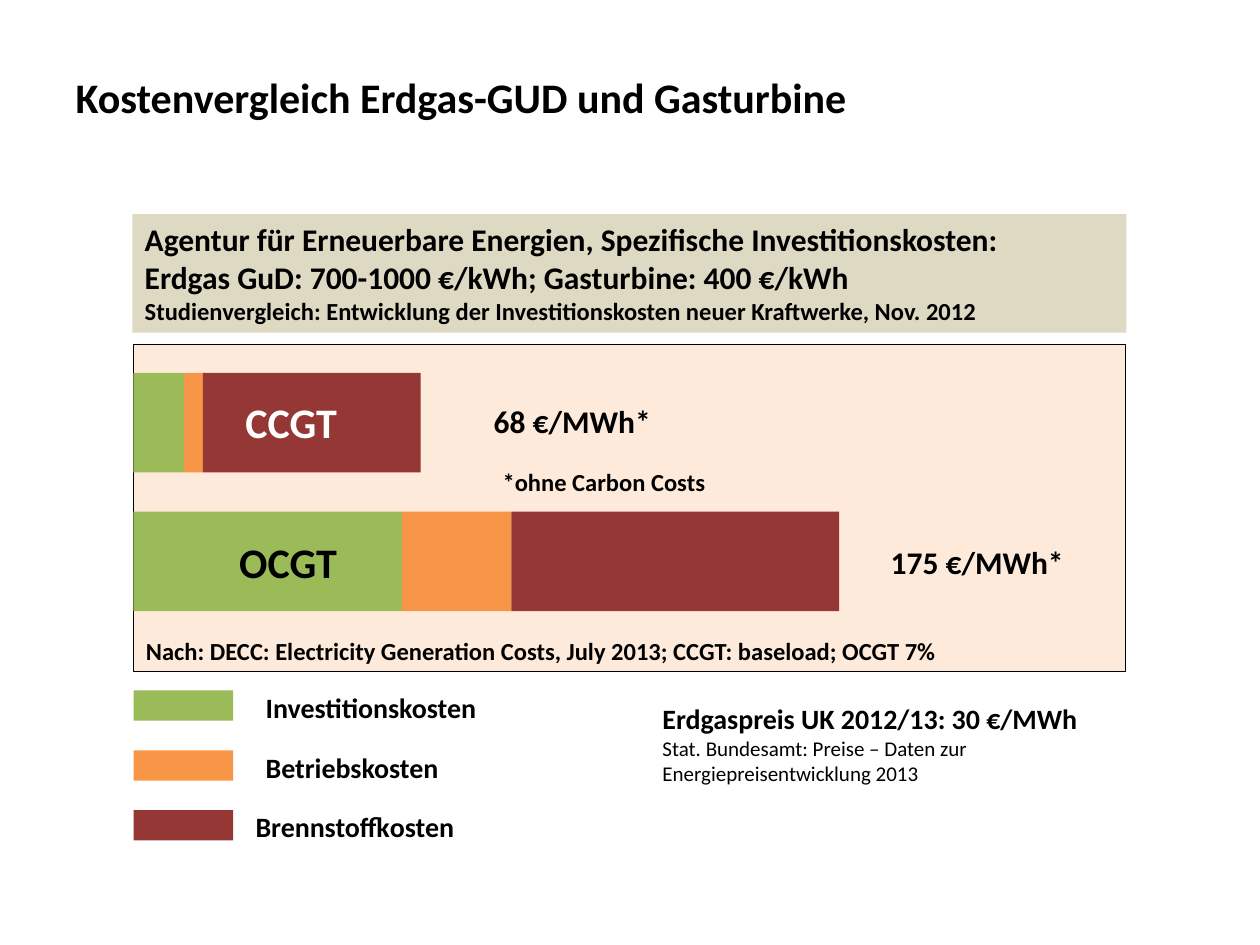
from pptx import Presentation
from pptx.dml.color import RGBColor
from pptx.enum import shapes, text
from pptx.util import Inches, Pt

FONT = "Calibri"
COLORS = {
    "text": "000000",
    "light": "FFFFFF",
    "panel": "FDEADA",
    "banner": "DDD9C3",
    "invest": "9BBB59",
    "operation": "F79646",
    "fuel": "953735",
}
COST_TYPES = ("invest", "operation", "fuel")


def color(name):
    return RGBColor.from_string(COLORS[name])


def add_block(slide, box, fill, outlined=False):
    block = slide.shapes.add_shape(
        shapes.MSO_SHAPE.RECTANGLE, *(Inches(length) for length in box))
    block.shadow.inherit = False
    block.fill.solid()
    block.fill.fore_color.rgb = color(fill)
    if outlined:
        block.line.color.rgb = color("text")
        block.line.width = Pt(0.25)
    else:
        block.line.fill.background()
    return block


def write(frame, lines, ink="text", **frame_format):
    """Fill a text frame with (wording, size, bold) lines."""
    for attribute, value in frame_format.items():
        setattr(frame, attribute, value)
    for index, (wording, size, bold) in enumerate(lines):
        paragraph = frame.add_paragraph() if index else frame.paragraphs[0]
        paragraph.alignment = text.PP_ALIGN.LEFT
        run = paragraph.add_run()
        run.text = wording
        font_format = {"name": FONT, "size": Pt(size), "bold": bold}
        for attribute, value in font_format.items():
            setattr(run.font, attribute, value)
        run.font.color.rgb = color(ink)


def add_label(slide, box, *lines, ink="text", wrap=False):
    label = slide.shapes.add_textbox(*(Inches(length) for length in box))
    write(label.text_frame, lines, ink, word_wrap=wrap,
          auto_size=text.MSO_AUTO_SIZE.SHAPE_TO_FIT_TEXT)


def add_title(slide, box, wording):
    title = slide.shapes.title
    for attribute, length in zip(("left", "top", "width", "height"), box):
        setattr(title, attribute, Inches(length))
    write(title.text_frame, [(wording, 24, True)],
          vertical_anchor=text.MSO_ANCHOR.MIDDLE)


def add_banner(slide, box):
    banner = add_block(slide, box, "banner")
    write(banner.text_frame, [
        ("Agentur für Erneuerbare Energien, Spezifische Investitionskosten:", 18, True),
        ("Erdgas GuD: 700-1000 €/kWh; Gasturbine: 400 €/kWh", 18, True),
        ("Studienvergleich: Entwicklung der Investitionskosten neuer Kraftwerke, Nov. 2012", 14, True),
    ], word_wrap=True, vertical_anchor=text.MSO_ANCHOR.TOP)


def add_cost_bar(slide, left, top, widths):
    for cost_type, width in zip(COST_TYPES, widths):
        add_block(slide, (left, top, width, 0.79), cost_type)
        left += width


def add_cost_panel(slide, box):
    left, top, width, height = box
    add_block(slide, box, "panel", outlined=True)
    add_cost_bar(slide, left, top + 0.23, (0.4, 0.15, 1.73))
    add_cost_bar(slide, left, top + 1.33, (2.13, 0.87, 2.6))

    labels = [
        ((2.76, 0.41, 1.46, 0.4), "68 €/MWh*", 18, "text"),
        ((5.91, 1.53, 1.59, 0.4), "175 €/MWh*", 18, "text"),
        ((0.79, 0.37, 0.94, 0.5), "CCGT", 24, "light"),
        ((0.74, 1.48, 0.99, 0.5), "OCGT", 24, "text"),
        ((2.83, 0.93, 1.82, 0.34), "*ohne Carbon Costs", 14, "text"),
    ]
    for (x, y, *size), wording, points, ink in labels:
        add_label(slide, (left + x, top + y, *size), (wording, points, True), ink=ink)
    add_label(slide, (left, top + height - 0.33, 6.61, 0.34),
              ("Nach: DECC: Electricity Generation Costs, July 2013; CCGT: baseload; OCGT 7%", 14, True),
              wrap=True)


def add_legend(slide, left, top):
    entries = [
        ("Investitionskosten", 0.95, 1.89),
        ("Betriebskosten", 0.95, 1.59),
        ("Brennstoffkosten", 0.87, 1.8),
    ]
    for row, (cost_type, (wording, indent, width)) in enumerate(zip(COST_TYPES, entries)):
        y = top + row * 0.95 / 2
        add_block(slide, (left, y, 0.79, 0.24), cost_type)
        add_label(slide, (left + indent, y - 0.05, width, 0.37), (wording, 16, True))


def add_gas_price(slide, box):
    add_label(slide, box,
              ("Erdgaspreis UK 2012/13: 30 €/MWh", 16, True),
              ("Stat. Bundesamt: Preise – Daten zur Energiepreisentwicklung 2013", 12, False),
              wrap=True)


def main():
    deck = Presentation()
    deck.slide_width, deck.slide_height = Inches(10), Inches(7.5)
    slide = deck.slides.add_slide(deck.slide_layouts.get_by_name("Title Only"))
    add_title(slide, (0.5, 0.3, 9, 0.93), "Kostenvergleich Erdgas-GUD und Gasturbine")
    add_cost_panel(slide, (1.06, 2.73, 7.87, 2.6))
    add_banner(slide, (1.05, 1.7, 7.89, 0.94))
    add_legend(slide, 1.06, 5.48)
    add_gas_price(slide, (5.16, 5.52, 3.7, 0.77))
    deck.save("out.pptx")


if __name__ == "__main__":
    main()
